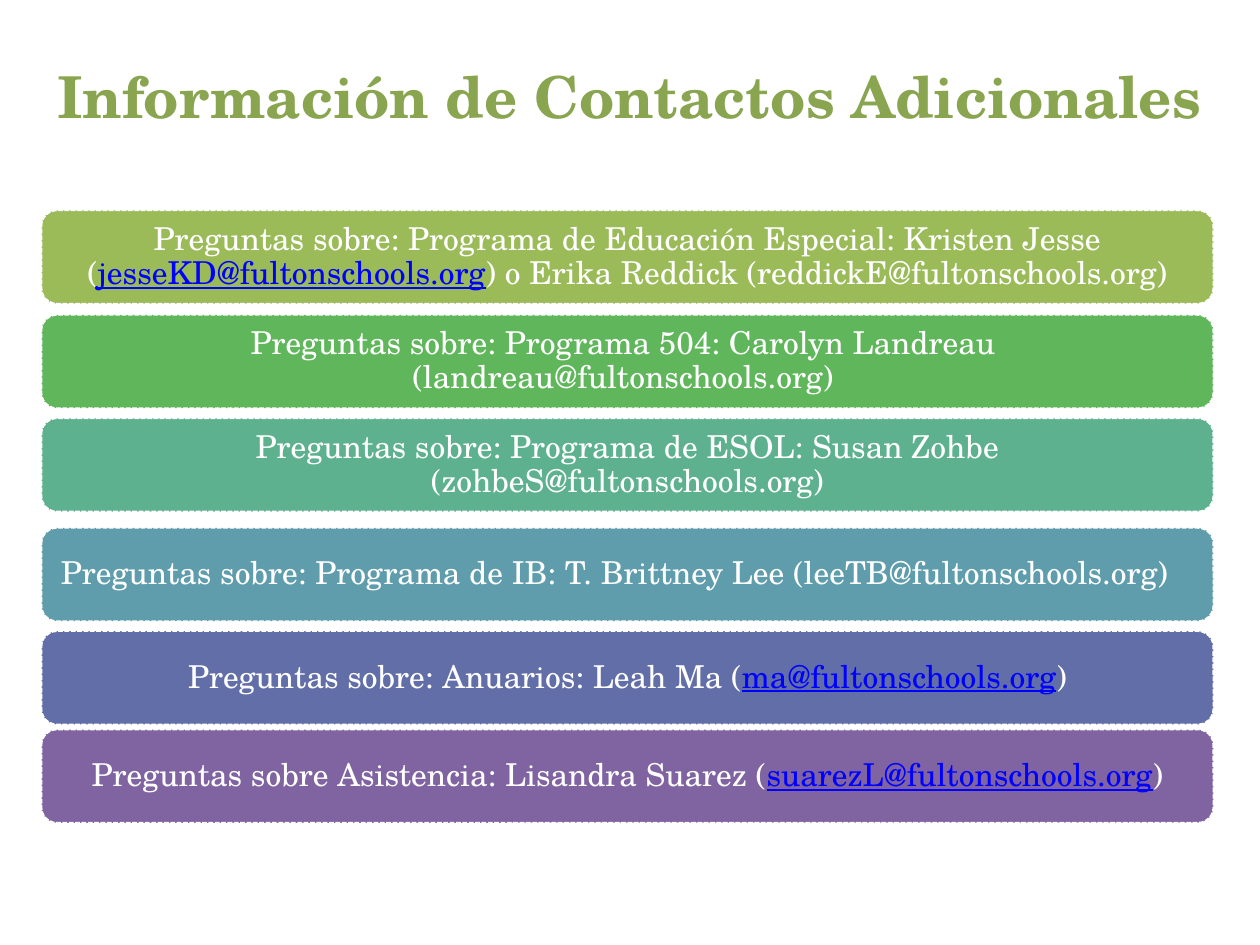
from pptx import Presentation
from pptx.dml.color import RGBColor
from pptx.enum.dml import MSO_LINE
from pptx.enum.shapes import MSO_SHAPE
from pptx.enum.text import MSO_ANCHOR, PP_ALIGN
from pptx.util import Inches, Pt

DASH = MSO_LINE.SQUARE_DOT
ROUND = MSO_SHAPE.ROUNDED_RECTANGLE
MIDDLE, BOTTOM = MSO_ANCHOR.MIDDLE, MSO_ANCHOR.BOTTOM
CENTER = PP_ALIGN.CENTER

FONT = "TeX Gyre Schola"
WHITE = RGBColor(0xFF, 0xFF, 0xFF)
BLUE = RGBColor(0x00, 0x00, 0xFF)
GREEN = RGBColor(0x89, 0xA5, 0x4F)

TITLE = "Información de Contactos Adicionales"
LEFT, WIDTH, HEIGHT = 0.33, 9.3, 0.74
INSET = 0.07

# top, fill, extra right inset, text before, linked address, text after
BARS = [
    (1.67, "9BBB59", 0,
     "Preguntas sobre: Programa de Educación Especial: Kristen Jesse (",
     "jesseKD@fultonschools.org",
     ") o Erika Reddick (reddickE@fultonschools.org)"),
    (2.5, "5FB65B", 0.07,
     "Preguntas sobre: Programa 504: Carolyn Landreau "
     "(landreau@fultonschools.org)", "", ""),
    (3.32, "5DB18E", 0,
     "Preguntas sobre: Programa de ESOL: Susan Zohbe "
     "(zohbeS@fultonschools.org)", "", ""),
    (4.19, "5F9DAC", 0.2,
     "Preguntas sobre: Programa de IB: T. Brittney Lee "
     "(leeTB@fultonschools.org)", "", ""),
    (5.01, "626EA7", 0,
     "Preguntas sobre: Anuarios: Leah Ma (", "ma@fultonschools.org", ")"),
    (5.79, "8064A2", 0,
     "Preguntas sobre Asistencia: Lisandra Suarez (",
     "suarezL@fultonschools.org", ")"),
]


def style(font, size, color):
    font.name = FONT
    font.size = Pt(size)
    font.color.rgb = color


def add_bar(slide, top, fill, extra, before, mail, after):
    bar = slide.shapes.add_shape(ROUND, Inches(LEFT), Inches(top),
                                 Inches(WIDTH), Inches(HEIGHT))
    bar.shadow.inherit = False
    bar.fill.solid()
    bar.fill.fore_color.rgb = RGBColor.from_string(fill)
    bar.line.color.rgb = WHITE
    bar.line.width = Pt(0.9)
    bar.line.dash_style = DASH

    frame = bar.text_frame
    frame.word_wrap = True
    frame.vertical_anchor = MIDDLE
    frame.margin_left = frame.margin_top = frame.margin_bottom = Inches(INSET)
    frame.margin_right = Inches(INSET + extra)
    para = frame.paragraphs[0]
    para.alignment = CENTER
    para.line_spacing = 0.9
    for text in filter(None, (before, mail, after)):
        run = para.add_run()
        run.text = text
        linked = text == mail
        style(run.font, 18, BLUE if linked else WHITE)
        run.font.underline = linked


def main():
    deck = Presentation()
    deck.slide_width, deck.slide_height = Inches(10), Inches(7.5)
    slide = deck.slides.add_slide(deck.slide_layouts[5])

    title = slide.shapes.title
    title.left, title.top = Inches(0.33), Inches(0.25)
    title.width, title.height = Inches(9.33), Inches(0.83)
    frame = title.text_frame
    frame.text = TITLE
    frame.vertical_anchor = BOTTOM
    para = frame.paragraphs[0]
    para.alignment = CENTER
    font = para.runs[0].font
    style(font, 33, GREEN)
    font.bold = True

    for bar in BARS:
        add_bar(slide, *bar)
    deck.save("out.pptx")


if __name__ == "__main__":
    main()
